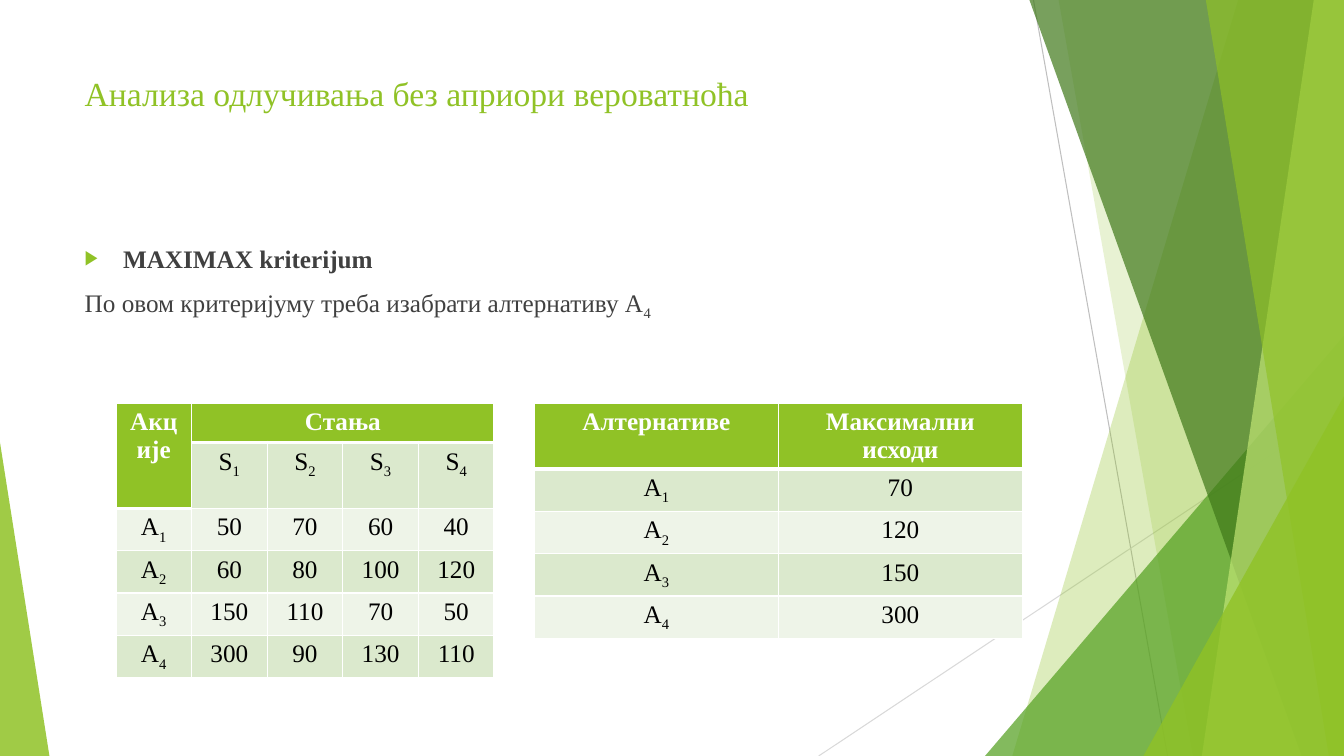
from lxml.etree import SubElement
from pptx import Presentation
from pptx.dml.color import RGBColor
from pptx.enum.shapes import MSO_CONNECTOR, MSO_SHAPE
from pptx.enum.text import MSO_ANCHOR, MSO_AUTO_SIZE, PP_ALIGN
from pptx.oxml.ns import qn
from pptx.util import Inches, Pt

WIDTH, HEIGHT = 13.33, 7.5
LEFT, TEXT_WIDTH = 0.74, 9.4
TABLE_TOP, ROW = 4, 0.42
GREEN, DARK, WHITE, BLACK = "90C226", "404040", "FFFFFF", "000000"
BANDS = ["EEF4E8", "DBE9CD"]


def paint(fill, color, opacity=100):
    """Fill a shape, line, font or cell with a hex colour."""
    fill.solid()
    fill.fore_color.rgb = RGBColor.from_string(color)
    if opacity < 100:
        tint = fill._xPr.find(".//" + qn("a:srgbClr"))
        SubElement(tint, qn("a:alpha"), val=str(opacity * 1000))


def write(paragraph, text, size=18, color=DARK, bold=False, align=PP_ALIGN.LEFT):
    """Write text in which an underscore starts a subscript."""
    paragraph.alignment = align
    for level, part in enumerate(text.split("_")):
        run = paragraph.add_run()
        run.text = part
        run.font.name, run.font.size, run.font.bold = "Times New Roman", Pt(size), bold
        paint(run.font.fill, color)
        if level:
            run.font._element.set("baseline", "-25000")


deck = Presentation()
deck.slide_width, deck.slide_height = Inches(WIDTH), Inches(HEIGHT)
slide = deck.slides.add_slide(deck.slide_layouts[1])
shapes = slide.shapes
title, body = slide.placeholders

# Thin lines behind the facets
for x1, y1, x2, color in [(10.25, 0, 11.58, "BFBFBF"), (WIDTH, 4.03, 8.12, "D9D9D9")]:
    ray = shapes.add_connector(MSO_CONNECTOR.STRAIGHT, Inches(x1), Inches(y1), Inches(x2), Inches(HEIGHT))
    ray.line.width = Pt(0.75)
    paint(ray.line.fill, color)
    SubElement(ray._element.spPr, qn("a:effectLst"))

# Facets: a panel has its top and bottom x and reaches the right edge;
# a triangle has its left, top, width and apex and stands on the bottom edge
facets = [
    ((12.28, 10.04), GREEN, 30),
    ((10.5, 11.83), GREEN, 20),
    ((9.77, 3.33, 3.56, 1), "54A021", 72),
    ((10.21, 12.91), "3F7819", 70),
    ((13.03, 11.92), "C0E474", 70),
    ((11.96, 13.18), GREEN, 65),
    ((11.34, 3.93, 1.99, 1), GREEN, 80),
    ((0, 4.39, 0.49, 0), GREEN, 85),
]
for outline, color, opacity in facets:
    if len(outline) == 2:
        top_x, bottom_x = outline
        builder = shapes.build_freeform(Inches(top_x), 0)
        corners = [(WIDTH, 0), (WIDTH, HEIGHT), (bottom_x, HEIGHT)]
        builder.add_line_segments([(Inches(x), Inches(y)) for x, y in corners], close=True)
        facet = builder.convert_to_shape()
    else:
        x, y, width, apex = outline
        facet = shapes.add_shape(MSO_SHAPE.ISOSCELES_TRIANGLE, Inches(x), Inches(y),
                                 Inches(width), Inches(HEIGHT - y))
        facet.adjustments[0] = apex
    paint(facet.fill, color, opacity)
    facet.line.fill.background()
    facet.shadow.inherit = False

# Title and body, in front of the facets
for holder, top, height in [(title, 0.67, 1.44), (body, 2.36, 4.24)]:
    holder.left, holder.top = Inches(LEFT), Inches(top)
    holder.width, holder.height = Inches(TEXT_WIDTH), Inches(height)
    holder.text_frame.vertical_anchor = MSO_ANCHOR.TOP
    holder.text_frame.auto_size = MSO_AUTO_SIZE.NONE
    shapes._spTree.append(holder._element)

write(title.text_frame.paragraphs[0], "Анализа одлучивања без априори вероватноћа", size=24, color=GREEN)

criterion = body.text_frame.paragraphs[0]
choice = body.text_frame.add_paragraph()
write(criterion, "MAXIMAX kriterijum", bold=True)
write(choice, "По овом критеријуму треба изабрати алтернативу А_4")
for paragraph, indent in [(criterion, 0.38), (choice, 0)]:
    paragraph.space_before = Pt(10)
    props = paragraph._p.get_or_add_pPr()
    props.set("marL", str(Inches(indent)))
    props.set("indent", str(-Inches(indent)))
    if indent:
        SubElement(SubElement(props, qn("a:buClr")), qn("a:srgbClr"), val=GREEN)
        SubElement(props, qn("a:buSzPct"), val="80000")
        SubElement(props, qn("a:buChar"), char="▶")
    else:
        SubElement(props, qn("a:buNone"))

# Tables: left, column width, row heights, header cells, merged ranges, rows
maxima = [
    ["Алтернативе", "Максимални исходи"],
    ["А_1", "70"],
    ["А_2", "120"],
    ["А_3", "150"],
    ["А_4", "300"],
]
outcomes = [
    ["Акције", "Стања", "", "", ""],
    ["", "S_1", "S_2", "S_3", "S_4"],
    ["А_1", "50", "70", "60", "40"],
    ["А_2", "60", "80", "100", "120"],
    ["А_3", "150", "110", "70", "50"],
    ["А_4", "300", "90", "130", "110"],
]
tables = [
    (5.3, 2.42, [0.64] + [ROW] * 4, [], maxima),
    (1.15, 0.75, [0.39, 0.65] + [ROW] * 4, [((0, 0), (1, 0)), ((0, 1), (0, 4))], outcomes),
]
for left, column_width, heights, merges, rows in tables:
    columns = len(rows[0])
    grid = shapes.add_table(len(rows), columns, Inches(left), Inches(TABLE_TOP),
                            Inches(column_width * columns), Inches(sum(heights))).table
    grid.horz_banding = False
    for column in grid.columns:
        column.width = Inches(column_width)
    for row, height in zip(grid.rows, heights):
        row.height = Inches(height)
    for first, last in merges:
        grid.cell(*first).merge(grid.cell(*last))

    for r, values in enumerate(rows):
        for c, value in enumerate(values):
            cell = grid.cell(r, c)
            header = r == 0 or not value
            below_header = r > 0 and (r == 1 or not rows[r - 1][c])
            edges = {"L": 1, "R": 1, "T": 3 if below_header else 1, "B": 3 if header else 1}
            for side, points in edges.items():
                border = SubElement(cell._tc.get_or_add_tcPr(), qn("a:ln" + side), w=str(Pt(points)))
                SubElement(SubElement(border, qn("a:solidFill")), qn("a:srgbClr"), val=WHITE)
            paint(cell.fill, GREEN if header else BANDS[r % 2])
            if value:
                write(cell.text_frame.paragraphs[0], value, color=WHITE if header else BLACK,
                      bold=header, align=PP_ALIGN.CENTER)

deck.save("out.pptx")
